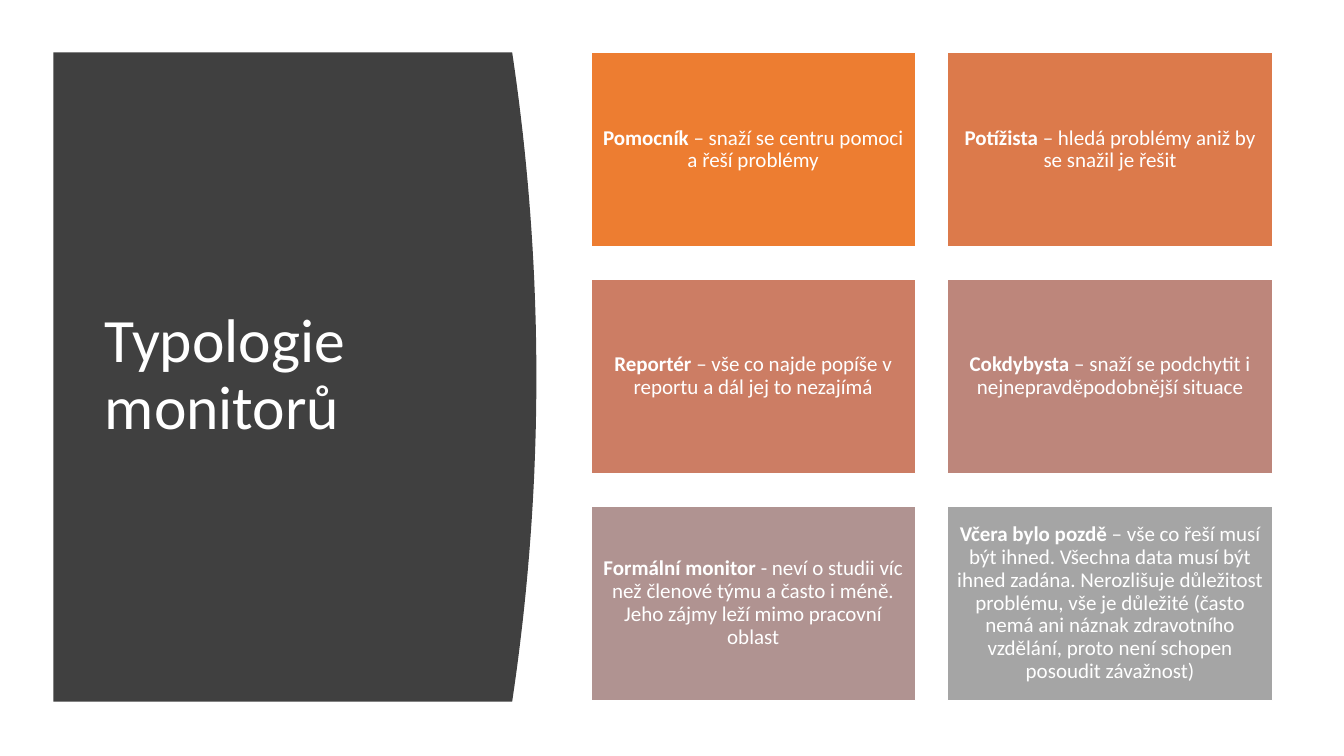
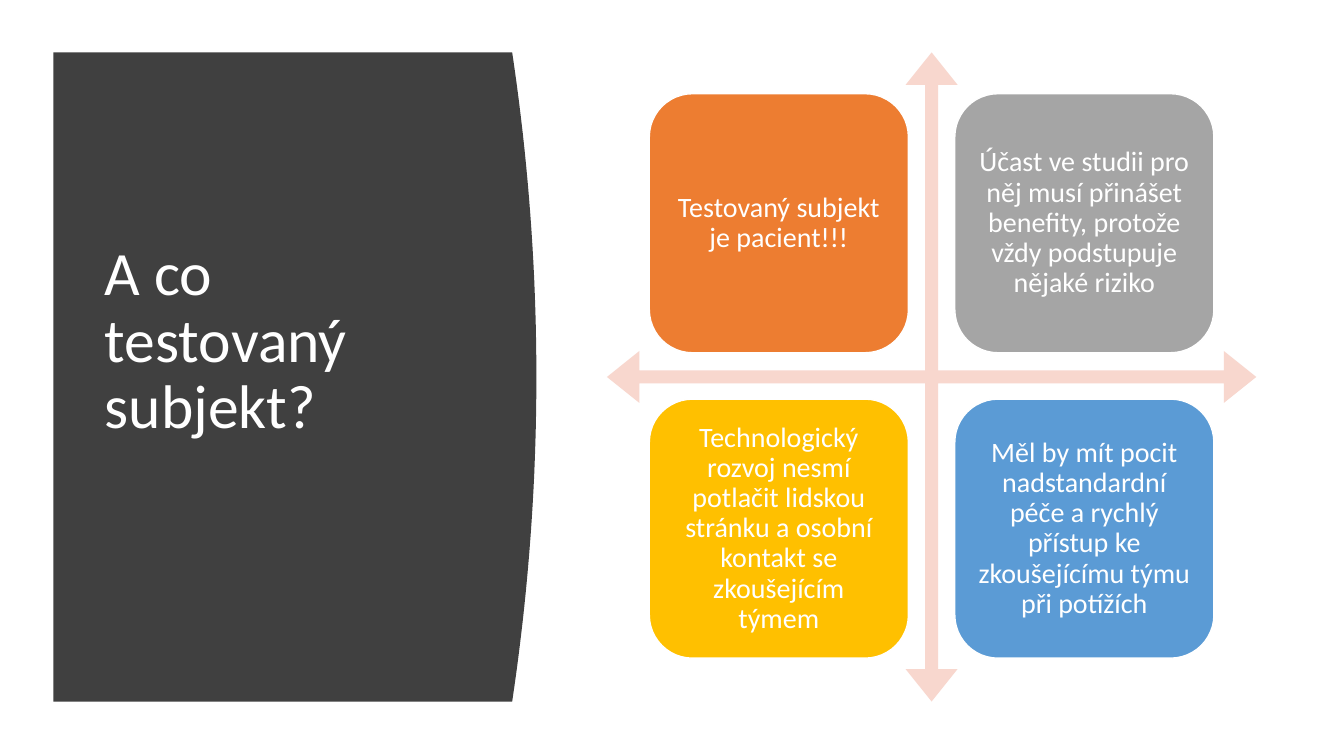
from pptx import Presentation
from pptx.dml.color import RGBColor
from pptx.enum.shapes import MSO_SHAPE
from pptx.enum.text import MSO_ANCHOR, MSO_AUTO_SIZE, PP_ALIGN
from pptx.util import Inches, Pt

FONT = "Calibri"
WHITE = "FFFFFF"
BAND = "404040"
ARROWS = "F8D7CE"
BAND_LEFT, BAND_TOP, BAND_BOTTOM = 0.53, 0.52, 6.96
BAND_EDGE, BAND_BULGE, BAND_STEPS = 5.08, 0.24, 40

TYPOLOGY_TITLE = "Typologie monitorů"
MONITORS = [
    ("Pomocník", " – snaží se centru pomoci a řeší problémy", "ED7D31"),
    ("Potížista", " – hledá problémy aniž by se snažil je řešit", "DC7A4B"),
    ("Reportér", " – vše co najde popíše v reportu a dál jej to nezajímá", "CC7D64"),
    ("Cokdybysta", " – snaží se podchytit i nejnepravděpodobnější situace", "BD867B"),
    ("Formální monitor", " - neví o studii víc než členové týmu a často i méně. "
     "Jeho zájmy leží mimo pracovní oblast", "B09391"),
    ("Včera bylo pozdě", " – vše co řeší musí být ihned. Všechna data musí být ihned "
     "zadána. Nerozlišuje důležitost problému, vše je důležité (často nemá ani náznak "
     "zdravotního vzdělání, proto není schopen posoudit závažnost)", "A5A5A5"),
]

SUBJECT_TITLE = "A co testovaný subjekt?"
SUBJECT_POINTS = [
    ("", "Testovaný subjekt je pacient!!!", "ED7D31"),
    ("", "Účast ve studii pro něj musí přinášet benefity, protože vždy podstupuje "
     "nějaké riziko", "A5A5A5"),
    ("", "Technologický rozvoj nesmí potlačit lidskou stránku a osobní kontakt se "
     "zkoušejícím týmem", "FFC000"),
    ("", "Měl by mít pocit nadstandardní péče a rychlý přístup ke zkoušejícímu týmu "
     "při potížích", "5B9BD5"),
]


def color(value):
    return RGBColor.from_string(value)


def paint(shape, fill, outline=None):
    shape.shadow.inherit = False
    shape.fill.solid()
    shape.fill.fore_color.rgb = color(fill)
    if outline:
        shape.line.color.rgb = color(outline)
        shape.line.width = Pt(1)
    else:
        shape.line.fill.background()


def style(paragraph, size, alignment):
    paragraph.alignment = alignment
    paragraph.line_spacing = 0.9
    paragraph.font.name = FONT
    paragraph.font.size = Pt(size)
    paragraph.font.color.rgb = color(WHITE)


def add_band(slide):
    middle = (BAND_TOP + BAND_BOTTOM) / 2
    half = middle - BAND_TOP
    curve = []
    for step in range(BAND_STEPS + 1):
        t = 2 * step / BAND_STEPS - 1
        curve.append((Inches(BAND_EDGE + BAND_BULGE * (1 - t * t)),
                      Inches(middle + half * t)))
    outline = slide.shapes.build_freeform(Inches(BAND_LEFT), Inches(BAND_TOP))
    outline.add_line_segments(curve + [(Inches(BAND_LEFT), Inches(BAND_BOTTOM))])
    band = outline.convert_to_shape()
    paint(band, BAND)
    slide.shapes.title._element.addprevious(band._element)


def add_titled_slide(deck, heading, bottom_inset=0.05):
    slide = deck.slides.add_slide(deck.slide_layouts[5])
    add_band(slide)
    title = slide.shapes.title
    title.left, title.top = Inches(0.94), Inches(1.11)
    title.width, title.height = Inches(3.74), Inches(5.24)
    frame = title.text_frame
    frame.text = heading
    frame.word_wrap = True
    frame.auto_size = MSO_AUTO_SIZE.NONE
    frame.vertical_anchor = MSO_ANCHOR.MIDDLE
    frame.margin_bottom = Inches(bottom_inset)
    style(frame.paragraphs[0], 44, PP_ALIGN.LEFT)
    return slide


def add_grid(slide, cards, preset, origin, size, step, inset, font_size):
    for index, (term, text, fill) in enumerate(cards):
        row, column = divmod(index, 2)
        card = slide.shapes.add_shape(
            preset,
            Inches(origin[0] + column * step[0]), Inches(origin[1] + row * step[1]),
            Inches(size[0]), Inches(size[1]))
        paint(card, fill, WHITE)
        frame = card.text_frame
        frame.word_wrap = True
        frame.vertical_anchor = MSO_ANCHOR.MIDDLE
        frame.margin_left = frame.margin_right = Inches(inset)
        frame.margin_top = frame.margin_bottom = Inches(inset)
        paragraph = frame.paragraphs[0]
        style(paragraph, font_size, PP_ALIGN.CENTER)
        if term:
            lead = paragraph.add_run()
            lead.text = term
            lead.font.bold = True
        paragraph.add_run().text = text


def add_cross_arrows(slide):
    side = Inches(BAND_BOTTOM - BAND_TOP)
    arrows = slide.shapes.add_shape(
        MSO_SHAPE.QUAD_ARROW, Inches(6.02), Inches(BAND_TOP), side, side)
    for index, value in enumerate((0.02, 0.04, 0.05)):
        arrows.adjustments[index] = value
    paint(arrows, ARROWS)


def main():
    deck = Presentation()
    deck.slide_width, deck.slide_height = Inches(13.33), Inches(7.5)

    typology = add_titled_slide(deck, TYPOLOGY_TITLE)
    add_grid(typology, MONITORS, MSO_SHAPE.RECTANGLE, origin=(5.86, 0.52),
             size=(3.22, 1.93), step=(3.54, 2.25), inset=0.06, font_size=15)

    subject = add_titled_slide(deck, SUBJECT_TITLE, bottom_inset=0.72)
    add_cross_arrows(subject)
    add_grid(subject, SUBJECT_POINTS, MSO_SHAPE.ROUNDED_RECTANGLE, origin=(6.44, 0.93),
             size=(2.57, 2.57), step=(3.03, 3.03), inset=0.08, font_size=20)

    deck.save("out.pptx")


if __name__ == "__main__":
    main()
